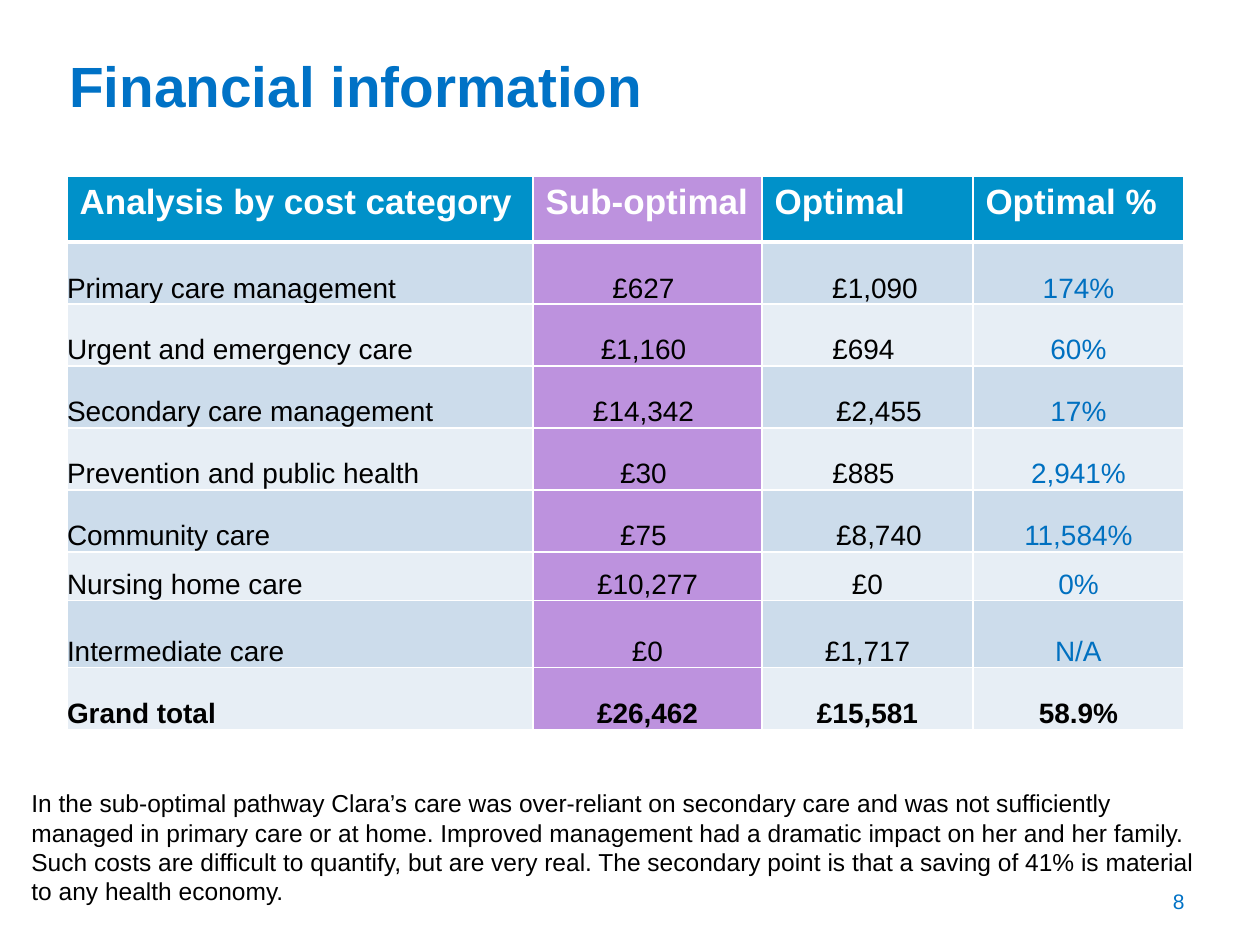
import lxml.etree
import pptx
import pptx.dml.color
import pptx.enum.text
import pptx.oxml.ns
import pptx.util

PX = 914400 / 126
ALIGN = pptx.enum.text.PP_ALIGN
ANCHOR = pptx.enum.text.MSO_ANCHOR
BLUE, LINK_BLUE, TEAL, PURPLE = "0072C6", "0070C0", "0091C9", "BD92DE"
BANDS = ["CCDCEB", "E7EEF5"]


def px(length):
    return pptx.util.Emu(round(length * PX))


def write(frame, text, size, color, bold=False, align=ALIGN.LEFT):
    frame.word_wrap = True
    paragraph = frame.paragraphs[0]
    paragraph.text = text
    paragraph.alignment = align
    font = paragraph.runs[0].font
    font.name = "Arial"
    font.size = pptx.util.Pt(size)
    font.bold = bold
    font.color.rgb = pptx.dml.color.RGBColor.from_string(color)


deck = pptx.Presentation()
deck.slide_width, deck.slide_height = px(1260), px(945)
slide = deck.slides.add_slide(deck.slide_layouts[6])

# Title
title = slide.shapes.add_textbox(px(57), px(50), px(1014), px(69)).text_frame
title.vertical_anchor = ANCHOR.MIDDLE
write(title, "Financial information", 32.4, BLUE, bold=True)

# Cost table
costs = [
    ["Analysis by cost category", "Sub-optimal", "Optimal", "Optimal %"],
    ["Primary care management", "£627", "£1,090", "174%"],
    ["Urgent and emergency care", "£1,160", "£694", "60%"],
    ["Secondary care management", "£14,342", "£2,455", "17%"],
    ["Prevention and public health", "£30", "£885", "2,941%"],
    ["Community care", "£75", "£8,740", "11,584%"],
    ["Nursing home care", "£10,277", "£0", "0%"],
    ["Intermediate care", "£0", "£1,717", "N/A"],
    ["Grand total", "£26,462", "£15,581", "58.9%"],
]
column_widths = [466, 229, 211, 211]
row_heights = [66, 62, 62, 62, 62, 62, 49, 67, 62]
# Extra left inset (or right, when negative) that nudges a centred amount
nudges = {(row, 1): -8 for row in range(1, 6)}
nudges.update({(1, 2): 15, (2, 2): -8, (3, 2): 23, (4, 2): -8, (5, 2): 23})

table = slide.shapes.add_table(
    len(costs), len(column_widths), px(67), px(176),
    px(sum(column_widths)), px(sum(row_heights))).table
for column, width in zip(table.columns, column_widths):
    column.width = px(width)
for row, height in zip(table.rows, row_heights):
    row.height = px(height)

for r, cost_row in enumerate(costs):
    is_header, is_total = r == 0, r == len(costs) - 1
    for c, value in enumerate(cost_row):
        cell = table.cell(r, c)
        if is_header:
            write(cell.text_frame, value, 20, "FFFFFF", bold=True)
        else:
            nudge = nudges.get((r, c), 0)
            cell.margin_left, cell.margin_right = px(max(nudge, 0)), px(max(-nudge, 0))
            cell.margin_top = cell.margin_bottom = 0
            cell.vertical_anchor = ANCHOR.BOTTOM
            color = LINK_BLUE if c == 3 and not is_total else "000000"
            write(cell.text_frame, value, 16, color, is_total,
                  ALIGN.CENTER if c else ALIGN.LEFT)
        background = PURPLE if c == 1 else TEAL if is_header else BANDS[(r - 1) % 2]
        cell.fill.solid()
        cell.fill.fore_color.rgb = pptx.dml.color.RGBColor.from_string(background)

        # White borders, thicker under the header; they precede the fill in the XML
        properties = cell._tc.get_or_add_tcPr()
        for position, side in enumerate(["L", "R", "T", "B"]):
            thick = (r, side) in [(0, "B"), (1, "T")]
            border = lxml.etree.Element(
                pptx.oxml.ns.qn("a:ln" + side), w=str(pptx.util.Pt(3 if thick else 1)))
            solid = lxml.etree.SubElement(border, pptx.oxml.ns.qn("a:solidFill"))
            lxml.etree.SubElement(solid, pptx.oxml.ns.qn("a:srgbClr"), val="FFFFFF")
            properties.insert(position, border)

# Commentary
commentary = slide.shapes.add_textbox(px(19), px(782), px(1213), px(131)).text_frame
write(commentary,
      "In the sub-optimal pathway Clara’s care was over-reliant on secondary care and "
      "was not sufficiently managed in primary care or at home. Improved management had "
      "a dramatic impact on her and her family. Such costs are difficult to quantify, "
      "but are very real. The secondary point is that a saving of 41% is material to any "
      "health economy.", 14, "000000")

# Page number
page_number = slide.shapes.add_textbox(px(903), px(876), px(294), px(50)).text_frame
page_number.vertical_anchor = ANCHOR.MIDDLE
write(page_number, "8", 12, BLUE, align=ALIGN.RIGHT)

deck.save("out.pptx")
